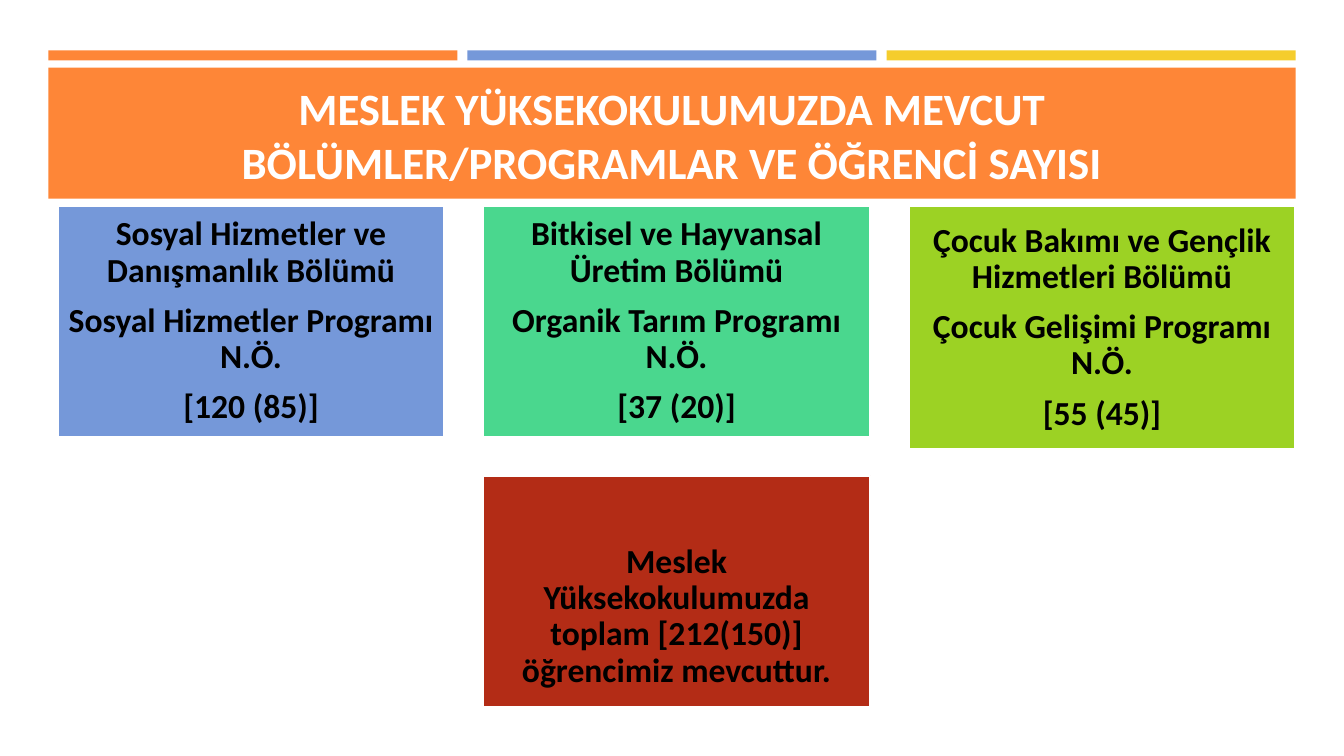
from dataclasses import dataclass
from pptx import Presentation
from pptx.dml.color import RGBColor
from pptx.enum.shapes import MSO_SHAPE
from pptx.enum.text import MSO_ANCHOR, MSO_AUTO_SIZE, PP_ALIGN
from pptx.util import Inches, Pt


@dataclass(frozen=True)
class Theme:
    font: str = "Calibri"
    head: int = 32
    body: int = 24
    white: str = "FFFFFF"
    black: str = "000000"
    orange: str = "FE8637"
    blue: str = "7598D9"
    gold: str = "F5CD2D"
    green: str = "4AD78E"
    lime: str = "9CD224"
    red: str = "B32C16"


THEME = Theme()


def write(frame, lines, size, color, anchor, gap=0, spacing=1.0):
    """Fill a text frame with bold, centred paragraphs."""
    frame.word_wrap = True
    frame.auto_size = MSO_AUTO_SIZE.NONE
    frame.vertical_anchor = anchor
    for i, line in enumerate(lines):
        para = frame.paragraphs[0] if i == 0 else frame.add_paragraph()
        para.text = line
        para.alignment = PP_ALIGN.CENTER
        para.line_spacing = spacing
        para.space_before = Pt(0)
        para.space_after = Pt(gap if i < len(lines) - 1 else 0)
        font = para.font
        font.name, font.size, font.bold = THEME.font, Pt(size), True
        font.color.rgb = RGBColor.from_string(color)


def block(slide, box, fill, line=None):
    """Draw a flat rectangle."""
    shape = slide.shapes.add_shape(MSO_SHAPE.RECTANGLE, *map(Inches, box))
    shape.shadow.inherit = False
    shape.fill.solid()
    shape.fill.fore_color.rgb = RGBColor.from_string(fill)
    if line:
        shape.line.color.rgb = RGBColor.from_string(line)
        shape.line.width = Pt(1.75)
    else:
        shape.line.fill.background()
    return shape


def header(slide, box, text):
    """Three thin stripes above a title band."""
    left, top, width, height = box
    gap = 0.1
    stripe = (width - 2 * gap) / 3
    for i, fill in enumerate((THEME.orange, THEME.blue, THEME.gold)):
        block(slide, (left + i * (stripe + gap), top, stripe, 0.1), fill)
    block(slide, (left, top + 0.17, width, height - 0.17), THEME.orange)

    # Title sits in front of its band
    title = slide.shapes.title
    title.left, title.top = Inches(left + 0.16), Inches(top - 0.08)
    title.width, title.height = Inches(width - 0.32), Inches(height + 0.03)
    write(title.text_frame, [text], THEME.head, THEME.white, MSO_ANCHOR.BOTTOM)
    title.element.getparent().append(title.element)


def card(slide, box, fill, lines, drop=0):
    """Coloured card; drop lowers the area its text is centred in."""
    shape = block(slide, box, fill, THEME.white)
    frame = shape.text_frame
    frame.margin_left = frame.margin_right = frame.margin_bottom = Inches(0.1)
    frame.margin_top = Inches(0.1 + drop)
    write(frame, lines, THEME.body, THEME.black, MSO_ANCHOR.MIDDLE,
          gap=10, spacing=0.9)


def cards(slide, box):
    """A row of departments with the total centred below."""
    left, top, width, height = box
    wide, tall = 3.84, 2.3
    step = (width - wide) / 2
    rows = (
        (THEME.blue, tall, ("Sosyal Hizmetler ve Danışmanlık Bölümü",
                            "Sosyal Hizmetler Programı N.Ö.", "[120 (85)]")),
        (THEME.green, tall, ("Bitkisel ve Hayvansal Üretim Bölümü",
                             "Organik Tarım Programı N.Ö.", "[37 (20)]")),
        (THEME.lime, 2.42, ("Çocuk Bakımı ve Gençlik Hizmetleri Bölümü",
                            "Çocuk Gelişimi Programı N.Ö.", "[55 (45)]")),
    )
    for i, (fill, high, lines) in enumerate(rows):
        card(slide, (left + i * step, top, wide, high), fill, lines)
    card(slide, (left + step, top + height - tall, wide, tall), THEME.red,
         ["Meslek Yüksekokulumuzda toplam [212(150)] öğrencimiz mevcuttur."],
         drop=0.5)


def main():
    deck = Presentation()
    deck.slide_width, deck.slide_height = Inches(13.33), Inches(7.5)
    slide = deck.slides.add_slide(deck.slide_layouts[5])
    header(slide, (0.48, 0.5, 12.37, 1.47),
           "MESLEK YÜKSEKOKULUMUZDA MEVCUT "
           "BÖLÜMLER/PROGRAMLAR VE ÖĞRENCİ SAYISI")
    cards(slide, (0.57, 2.04, 12.28, 4.98))
    deck.save("out.pptx")


if __name__ == "__main__":
    main()
